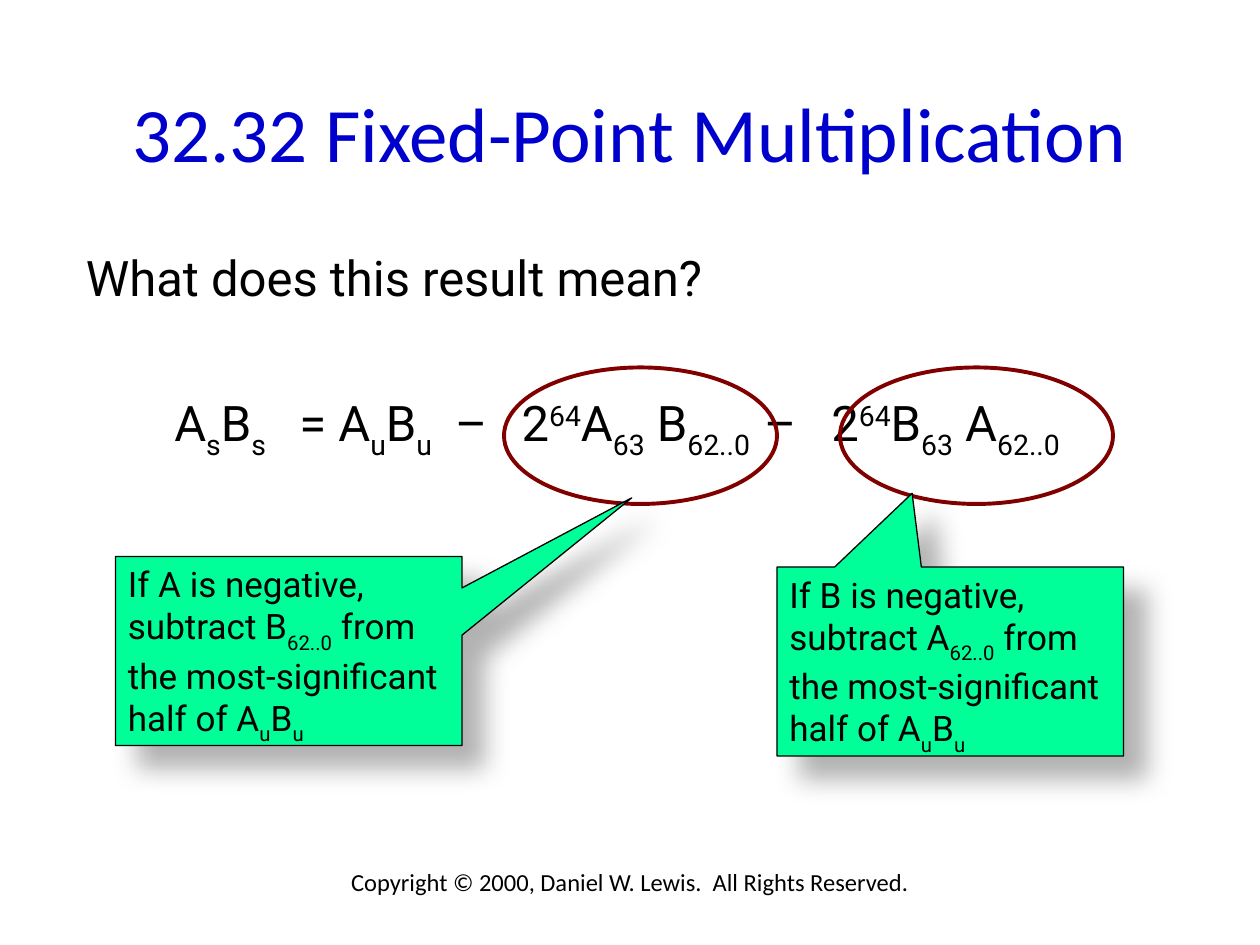
import lxml.etree
import pptx
import pptx.dml.color
import pptx.enum.shapes
import pptx.enum.text
import pptx.oxml.ns
import pptx.util

Pt = pptx.util.Pt
Anchor = pptx.enum.text.MSO_ANCHOR
Align = pptx.enum.text.PP_ALIGN
Shape = pptx.enum.shapes.MSO_SHAPE

BLACK = "000000"
BASELINES = {"_": "-30000", "^": "30000"}
EQUATION = ("\tA|_s|B|_s|\t= A|_u|B|_u|\t–\t2|^64|A|_63| B|_62..0|"
            "\t–\t2|^64|B|_63| A|_62..0")
EQUATION_TABS = [50.5, 122, 211, 249, 387.5, 426]


def rgb(value):
    return pptx.dml.color.RGBColor.from_string(value)


def add_xml(parent, tag, **attributes):
    element = lxml.etree.SubElement(parent, pptx.oxml.ns.qn(tag))
    for name, value in attributes.items():
        element.set(name, str(value))
    return element


def add_tabs(paragraph, positions):
    tabs = add_xml(paragraph._p.get_or_add_pPr(), "a:tabLst")
    for position in positions:
        add_xml(tabs, "a:tab", pos=int(Pt(position)), algn="l")


def write_runs(paragraph, markup, size, font, color):
    for part in markup.split("|"):
        baseline = BASELINES.get(part[0])
        run = paragraph.add_run()
        run.text = part[1:] if baseline else part
        run.font.size = Pt(size)
        run.font.name = font
        run.font.color.rgb = rgb(color)
        if baseline:
            run.font._element.set("baseline", baseline)


def add_text(slide, box, text, size, font, color=BLACK,
             align=Align.LEFT, anchor=Anchor.TOP):
    shape = slide.shapes.add_textbox(*map(Pt, box))
    frame = shape.text_frame
    frame.word_wrap = True
    frame.vertical_anchor = anchor
    paragraph = frame.paragraphs[0]
    paragraph.alignment = align
    write_runs(paragraph, text, size, font, color)
    return frame


def add_ellipse(group, box):
    ellipse = group.shapes.add_shape(Shape.OVAL, *map(Pt, box))
    ellipse.shadow.inherit = False
    ellipse.fill.background()
    ellipse.line.color.rgb = rgb("800000")
    ellipse.line.width = Pt(2.25)


def add_shadow(shape):
    shape.shadow.inherit = False
    effects = shape._element.spPr.find(pptx.oxml.ns.qn("a:effectLst"))
    shadow = add_xml(effects, "a:outerShdw", blurRad=int(Pt(15)), dist=int(Pt(18)),
                     dir=45 * 60000, algn="ctr", rotWithShape=0)
    color = add_xml(shadow, "a:srgbClr", val=BLACK)
    add_xml(color, "a:alpha", val=30000)


def add_callout(group, box, tip, markup):
    callout = group.shapes.add_shape(Shape.RECTANGULAR_CALLOUT, *map(Pt, box))
    for index, value in enumerate(tip):
        callout.adjustments[index] = value
    callout.fill.solid()
    callout.fill.fore_color.rgb = rgb("00FF99")
    callout.line.color.rgb = rgb(BLACK)
    callout.line.width = Pt(0.75)
    add_shadow(callout)
    frame = callout.text_frame
    frame.word_wrap = True
    frame.vertical_anchor = Anchor.TOP
    paragraph = frame.paragraphs[0]
    paragraph.alignment = Align.LEFT
    write_runs(paragraph, markup, 20, "Roboto", BLACK)


def add_explained_term(slide, ellipse_left, callout_left, callout_top, tip, sign, other):
    group = slide.shapes.add_group_shape()
    add_ellipse(group, (ellipse_left, 210, 156, 78))
    add_callout(group, (callout_left, callout_top, 198, 108), tip,
                f"If {sign} is negative, subtract {other}|_62..0"
                "| from the most-significant half of A|_u|B|_u")


def main():
    presentation = pptx.Presentation()
    presentation.slide_width = Pt(720)
    presentation.slide_height = Pt(540)
    slide = presentation.slides.add_slide(presentation.slide_layouts[6])

    add_text(slide, (54, 492, 612, 36),
             "Copyright © 2000, Daniel W. Lewis.  All Rights Reserved.",
             14, "Calibri", align=Align.CENTER)
    add_text(slide, (54, 30, 612, 90), "32.32 Fixed-Point Multiplication",
             44, "Calibri", "0000CC", Align.CENTER, Anchor.MIDDLE)

    body = add_text(slide, (42, 138, 630, 178), "What does this result mean?", 28, "Roboto")
    equation = body.add_paragraph()
    equation.space_before = Pt(49)
    add_tabs(equation, EQUATION_TABS)
    write_runs(equation, EQUATION, 28, "Roboto", BLACK)

    add_explained_term(slide, 288, 66, 318, (0.99, -0.81), "A", "B")
    add_explained_term(slide, 480, 444, 324, (-0.11, -0.89), "B", "A")
    presentation.save("out.pptx")


if __name__ == "__main__":
    main()
